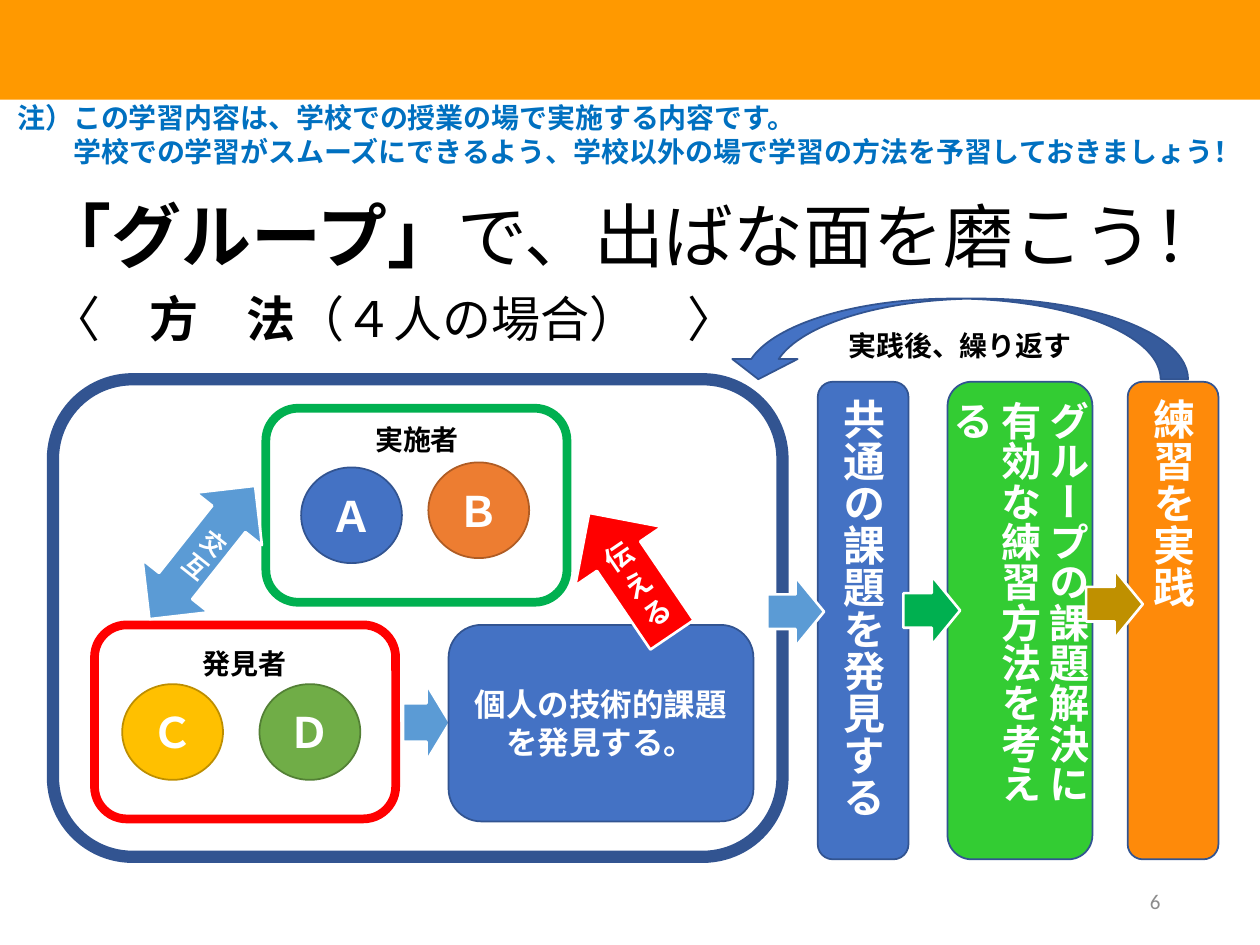
from pptx import Presentation
from pptx.dml.color import RGBColor
from pptx.enum.shapes import MSO_SHAPE as SHAPE
from pptx.enum.text import MSO_ANCHOR as ANCHOR, MSO_AUTO_SIZE as AUTO, PP_ALIGN as ALIGN
from pptx.oxml.ns import qn
from pptx.util import Inches, Pt

BLUE, NAVY, SKY, WHITE, BLACK = "4472C4", "325491", "5B9BD5", "FFFFFF", "000000"
GREEN, RED = "00B050", "FF0000"


def write(shape, runs_by_line, size, color, align=ALIGN.CENTER, font="Calibri"):
    """Fill a shape with lines, each a list of (text, bold) runs."""
    frame = shape.text_frame
    frame.word_wrap = True
    frame.auto_size = AUTO.NONE
    frame.vertical_anchor = ANCHOR.MIDDLE
    for i, runs in enumerate(runs_by_line):
        line = frame.add_paragraph() if i else frame.paragraphs[0]
        line.alignment = align
        for text, bold in runs:
            run = line.add_run()
            run.text = text
            run.font.name, run.font.size, run.font.bold = font, Pt(size), bold
            run.font.color.rgb = RGBColor.from_string(color)


def draw(kind, box, fill=None, line=None, width=1.0):
    """Add a preset shape; box is left, top, width, height in inches."""
    shape = slide.shapes.add_shape(kind, *map(Inches, box))
    shape.shadow.inherit = False
    if fill:
        shape.fill.solid()
        shape.fill.fore_color.rgb = RGBColor.from_string(fill)
    else:
        shape.fill.background()
    if line:
        shape.line.color.rgb = RGBColor.from_string(line)
        shape.line.width = Pt(width)
    else:
        shape.line.fill.background()
    return shape


prs = Presentation()
prs.slide_width, prs.slide_height = Inches(10), Inches(7.5)
slide = prs.slides.add_slide(prs.slide_layouts[5])

# Banner and headings
draw(SHAPE.RECTANGLE, (-0.02, 0, 10.02, 0.79), "FF9900")
title = slide.shapes.title
title.left, title.top, title.width, title.height = map(Inches, (0.04, 1.31, 9.96, 1.11))
write(title, [[("「グループ」", True), ("で、出ばな面を磨こう！", False)]], 40, BLACK)

method = draw(SHAPE.RECTANGLE, (0.1, 2.21, 6.05, 0.62), WHITE)
write(method, [[("〈　", False), ("方　法", True), ("（４人の場合）　〉", False)]], 28, BLACK)

# Slide number
number = slide.shapes.add_textbox(Inches(7.06), Inches(6.95), Inches(2.25), Inches(0.4))
write(number, [[("6", False)]], 12, "8C8C8C", ALIGN.RIGHT)

# Performers and observers
for role, left, top, color, label_left, label_top in [
    ("実施者", 2.11, 3.24, GREEN, 2.84, 3.34),
    ("発見者", 0.75, 4.96, RED, 1.47, 5.12),
]:
    draw(SHAPE.ROUNDED_RECTANGLE, (left, top, 2.39, 1.54), None, color, 5)
    label = draw(SHAPE.RECTANGLE, (label_left, label_top, 0.94, 0.29), WHITE)
    write(label, [[(role, True)]], 16, BLACK)

for member, left, top, fill, edge in [
    ("Ａ", 2.39, 3.71, BLUE, NAVY),
    ("Ｂ", 3.4, 3.67, "ED7D31", "AF5C24"),
    ("Ｃ", 0.97, 5.43, "FFC000", "BD8E00"),
    ("Ｄ", 2.06, 5.43, "70AD47", "538035"),
]:
    circle = draw(SHAPE.OVAL, (left, top, 0.8, 0.76), fill, edge)
    write(circle, [[(member, True)]], 24, WHITE)

# Individual issue
draw(SHAPE.RIGHT_ARROW, (3.2, 5.43, 0.37, 0.61), SKY, WHITE, 1.5)
issue = draw(SHAPE.FLOWCHART_ALTERNATE_PROCESS, (3.56, 4.96, 2.42, 1.56), BLUE, NAVY)
write(issue, [[("個人の技術的課題", True)], [("を発見する。", True)]], 18, WHITE)

# Tilted arrows between the groups
for action, kind, box, angle, fill, size in [
    ("交互", SHAPE.UP_DOWN_ARROW, (1.27, 3.71, 0.67, 1.35), 38.4, SKY, 14),
    ("伝える", SHAPE.UP_ARROW, (4.59, 3.97, 0.83, 1.17), 325.8, RED, 16),
]:
    arrow = draw(kind, box, fill, WHITE, 1.5)
    arrow.rotation = angle
    write(arrow, [[(action, True)]], size, WHITE)

# Frame around the group work
draw(SHAPE.FLOWCHART_ALTERNATE_PROCESS, (0.42, 3.01, 5.79, 3.79), None, NAVY, 7)

# Vertical steps, each with the arrow that leads into it
for lines, left, width, fill, size, align, arrow_left, arrow_top, arrow_fill in [
    (["共通の課題を発見する"], 6.49, 0.72, BLUE, 24, ALIGN.CENTER, 6.09, 4.58, SKY),
    (["グループの課題解決に", "有効な練習方法を考える"], 7.52, 1.15, "33CC33", 23, ALIGN.LEFT,
     7.17, 4.57, GREEN),
    (["練習を実践"], 8.95, 0.72, "FE8A0A", 24, ALIGN.LEFT, 8.62, 4.52, "BF9000"),
]:
    step = draw(SHAPE.FLOWCHART_ALTERNATE_PROCESS, (left, 3.03, width, 3.79), fill, NAVY)
    write(step, [[(text, True)] for text in lines], size, WHITE, align)
    step.text_frame._txBody.find(qn("a:bodyPr")).set("vert", "eaVert")
    draw(SHAPE.RIGHT_ARROW, (arrow_left, arrow_top, 0.45, 0.55), arrow_fill, WHITE, 1.5)

# Loop back to the start
loop = draw(SHAPE.CURVED_DOWN_ARROW, (5.76, 2.37, 3.67, 0.64), BLUE, NAVY)
for i, value in enumerate((0.34, 0.81, 0.25)):
    loop.adjustments[i] = value
loop._element.spPr.find(qn("a:xfrm")).set("flipH", "1")
repeat = draw(SHAPE.RECTANGLE, (6.55, 2.6, 2.14, 0.28), WHITE)
write(repeat, [[("実践後、繰り返す", True)]], 16, BLACK)

# Note under the banner, second line indented by two characters
note = slide.shapes.add_textbox(Inches(0.04), Inches(0.75), Inches(10.26), Inches(0.64))
write(note, [[("注）この学習内容は、学校での授業の場で実施する内容です。", True)],
             [("学校での学習がスムーズにできるよう、学校以外の場で学習の方法を予習しておきましょう！", True)]],
      16, "0070C0", ALIGN.LEFT, "Noto Sans CJK JP")
note.text_frame.vertical_anchor = ANCHOR.TOP
note.text_frame.paragraphs[1]._p.get_or_add_pPr().set("marL", str(Pt(32)))

prs.save("out.pptx")
